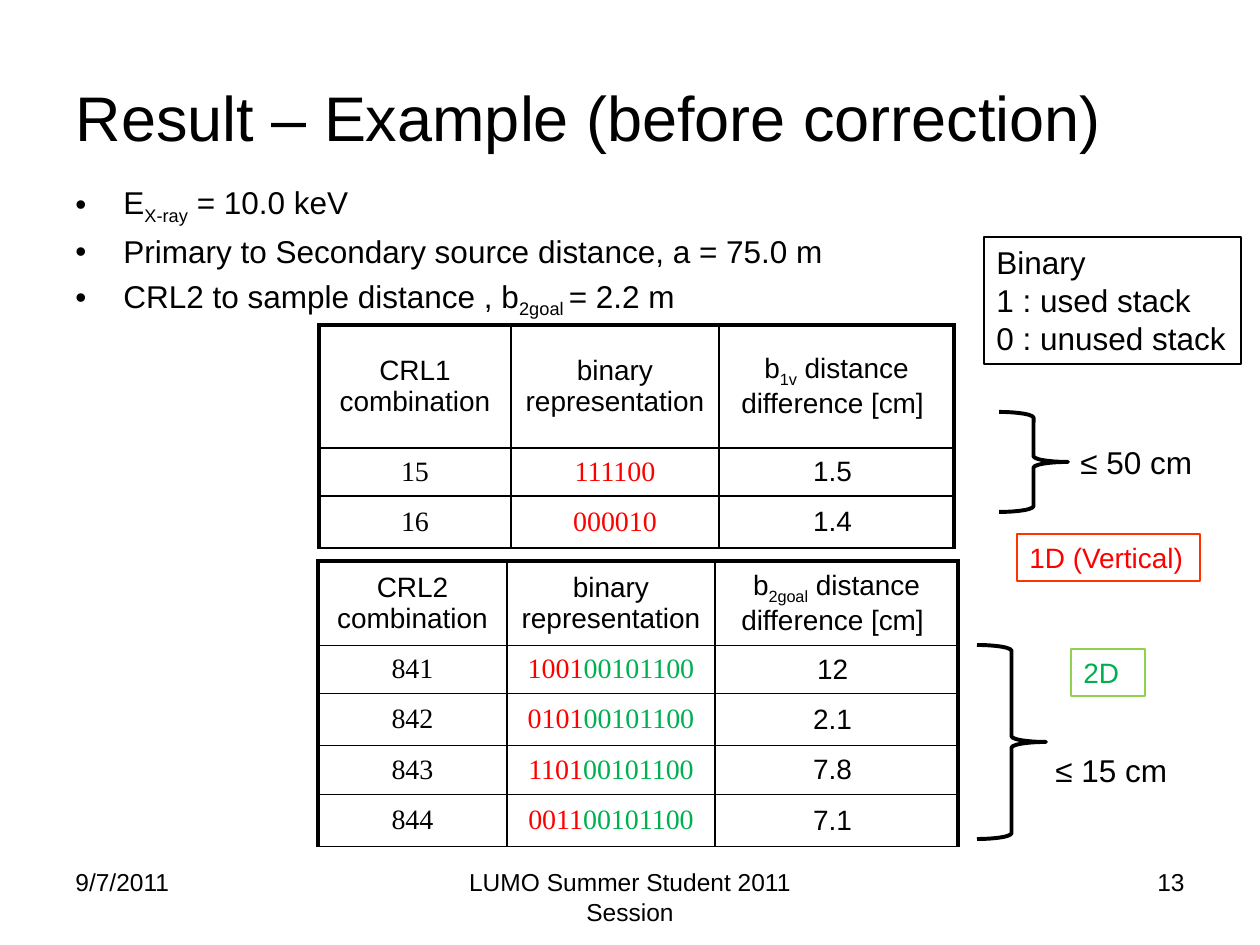
from typing import NamedTuple

from lxml import etree
from pptx import Presentation
from pptx.dml.color import RGBColor
from pptx.enum.shapes import MSO_SHAPE
from pptx.enum.text import MSO_ANCHOR, PP_ALIGN
from pptx.oxml.ns import qn
from pptx.util import Emu, Pt

LEFT, CENTER, RIGHT = PP_ALIGN.LEFT, PP_ALIGN.CENTER, PP_ALIGN.RIGHT
TOP, MIDDLE = MSO_ANCHOR.TOP, MSO_ANCHOR.MIDDLE
RIGHT_BRACE = MSO_SHAPE.RIGHT_BRACE

BLACK = RGBColor(0x00, 0x00, 0x00)
RED = RGBColor(0xFF, 0x00, 0x00)
GREEN = RGBColor(0x00, 0xB0, 0x50)
ORANGE = RGBColor(0xFF, 0x33, 0x00)
LIME = RGBColor(0x92, 0xD0, 0x50)

SANS, SERIF = "Arial", "Times New Roman"
PX_PER_INCH = 126
THICK, THIN = 2.25, 1
COMMON_BITS = "00101100"


class Piece(NamedTuple):
    text: str
    color: RGBColor = BLACK
    font: str = SANS
    subscript: bool = False


def px(length):
    return Emu(round(length * 914400 / PX_PER_INCH))


def emu_box(box):
    return [px(length) for length in box]


def write(paragraph, pieces, size, align=LEFT):
    paragraph.alignment = align
    for piece in pieces:
        run = paragraph.add_run()
        run.text = piece.text
        run.font.size = Pt(size)
        run.font.name = piece.font
        run.font.color.rgb = piece.color
        if piece.subscript:
            run._r.get_or_add_rPr().set("baseline", "-25000")


def subscripted(before, low, after):
    return [Piece(before), Piece(low, subscript=True), Piece(after)]


def add_text(slide, box, lines, size, align=LEFT, color=BLACK, wrap=True, outline=None):
    shape = slide.shapes.add_textbox(*emu_box(box))
    frame = shape.text_frame
    frame.word_wrap = wrap
    frame.vertical_anchor = TOP
    for index, line in enumerate(lines):
        paragraph = frame.add_paragraph() if index else frame.paragraphs[0]
        write(paragraph, [Piece(line, color)], size, align)
    if outline is not None:
        shape.line.color.rgb = outline
        shape.line.width = Pt(0.75)


def add_title(slide, box, text):
    title = slide.shapes.title
    title.left, title.top, title.width, title.height = emu_box(box)
    title.text_frame.vertical_anchor = MIDDLE
    write(title.text_frame.paragraphs[0], [Piece(text)], 36)


def add_bullets(slide, box, items):
    frame = slide.shapes.add_textbox(*emu_box(box)).text_frame
    frame.word_wrap = True
    for index, pieces in enumerate(items):
        paragraph = frame.add_paragraph() if index else frame.paragraphs[0]
        write(paragraph, pieces, 18)
        paragraph.space_before = Pt(3.6)
        properties = paragraph._p.get_or_add_pPr()
        properties.set("marL", str(px(48)))
        properties.set("indent", str(-px(48)))
        font = etree.SubElement(properties, qn("a:buFont"))
        font.set("typeface", SANS)
        bullet = etree.SubElement(properties, qn("a:buChar"))
        bullet.set("char", "•")


def set_borders(cell, widths):
    properties = cell._tc.get_or_add_tcPr()
    for index, (side, width) in enumerate(widths.items()):
        line = etree.Element(qn(f"a:ln{side}"), w=str(Pt(width)))
        fill = etree.SubElement(line, qn("a:solidFill"))
        etree.SubElement(fill, qn("a:srgbClr")).set("val", str(BLACK))
        properties.insert(index, line)


def add_results_table(slide, position, columns, heights, rows):
    box = (*position, sum(columns), sum(heights))
    table = slide.shapes.add_table(len(rows), len(columns), *emu_box(box)).table
    table.first_row = table.horz_banding = False
    for column, width in zip(table.columns, columns):
        column.width = px(width)
    for row, height in zip(table.rows, heights):
        row.height = px(height)
    last = len(columns) - 1
    for r, row in enumerate(rows):
        for c, pieces in enumerate(row):
            cell = table.cell(r, c)
            cell.fill.background()
            cell.vertical_anchor = MIDDLE
            paragraph = cell.text_frame.paragraphs[0]
            write(paragraph, pieces, 16, CENTER)
            paragraph.space_before = Pt(3.2)
            set_borders(cell, {
                "L": THICK if c == 0 else THIN,
                "R": THICK if c == last else THIN,
                "T": THICK if r == 0 else THIN,
                "B": THIN,
            })


def header_row(lens, low):
    return [
        [Piece(f"{lens} combination")],
        [Piece("binary representation ")],
        subscripted("b", low, " distance difference [cm] "),
    ]


def result_row(combination, red_bits, green_bits, difference):
    bits = [Piece(red_bits, RED, SERIF)]
    if green_bits:
        bits.append(Piece(green_bits, GREEN, SERIF))
    return [[Piece(combination, font=SERIF)], bits, [Piece(f"{difference} ")]]


def add_brace(slide, box, label, label_offset):
    brace = slide.shapes.add_shape(RIGHT_BRACE, *emu_box(box))
    brace.shadow.inherit = False
    brace.fill.background()
    brace.line.color.rgb = BLACK
    brace.line.width = Pt(THICK)
    left, top = box[0] + label_offset[0], box[1] + label_offset[1]
    add_text(slide, (left, top, 139, 50), [label], 18, wrap=False)


def add_footer(slide, box, date, event, number):
    left, top, width, height = box
    side, middle = 294, 400
    add_text(slide, (left, top, side, height), [date], 14)
    add_text(slide, (left + (width - middle) // 2, top, middle, height), [event], 14, CENTER)
    add_text(slide, (left + width - side, top, side, height), [number], 14, RIGHT)


def main():
    presentation = Presentation()
    presentation.slide_width, presentation.slide_height = px(1260), px(945)
    slide = presentation.slides.add_slide(presentation.slide_layouts[5])

    add_title(slide, (63, 38, 1134, 157), "Result – Example (before correction)")
    add_bullets(slide, (63, 177, 1135, 156), [
        subscripted("E", "X-ray", " = 10.0 keV"),
        [Piece("Primary to Secondary source distance, a = 75.0 m")],
        subscripted("CRL2 to sample distance , b", "2goal ", "= 2.2 m"),
    ])

    crl1_results = [("15", "111100", "1.5"), ("16", "000010", "1.4")]
    add_results_table(
        slide, (319, 325), (192, 208, 235), (123, 48, 52),
        [header_row("CRL1", "1v")]
        + [result_row(name, bits, "", gap) for name, bits, gap in crl1_results])

    crl2_results = [("841", "1001", "12"), ("842", "0101", "2.1"),
                    ("843", "1101", "7.8"), ("844", "0011", "7.1")]
    add_results_table(
        slide, (318, 561), (189, 208, 243), (79, 48, 52, 49, 52),
        [header_row("CRL2", "2goal")]
        + [result_row(name, bits, COMMON_BITS, gap) for name, bits, gap in crl2_results])

    add_brace(slide, (999, 412, 69, 100), "≤ 50 cm", (69, 25))
    add_brace(slide, (977, 645, 69, 194), "≤ 15 cm", (66, 100))

    add_text(slide, (1017, 534, 183, 47), ["1D (Vertical)"], 16, color=RED, outline=ORANGE)
    add_text(slide, (1071, 649, 74, 47), ["2D"], 16, color=GREEN, outline=LIME)
    add_text(slide, (984, 237, 257, 127),
             ["Binary", "1 : used stack", "0 : unused stack"], 18, wrap=False, outline=BLACK)

    add_footer(slide, (63, 861, 1134, 66), "9/7/2011", "LUMO Summer Student 2011 Session", "13")
    presentation.save("out.pptx")


if __name__ == "__main__":
    main()
